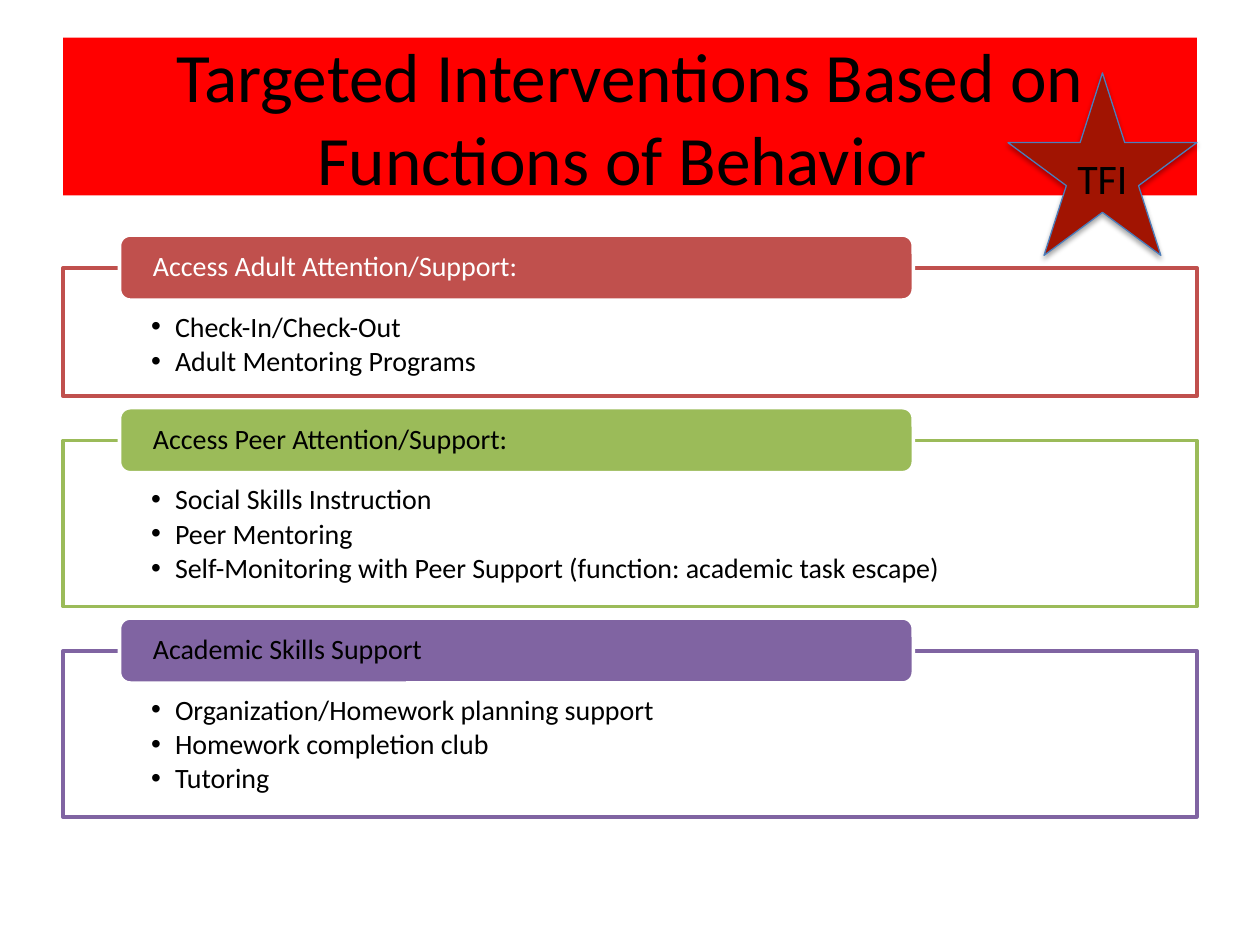
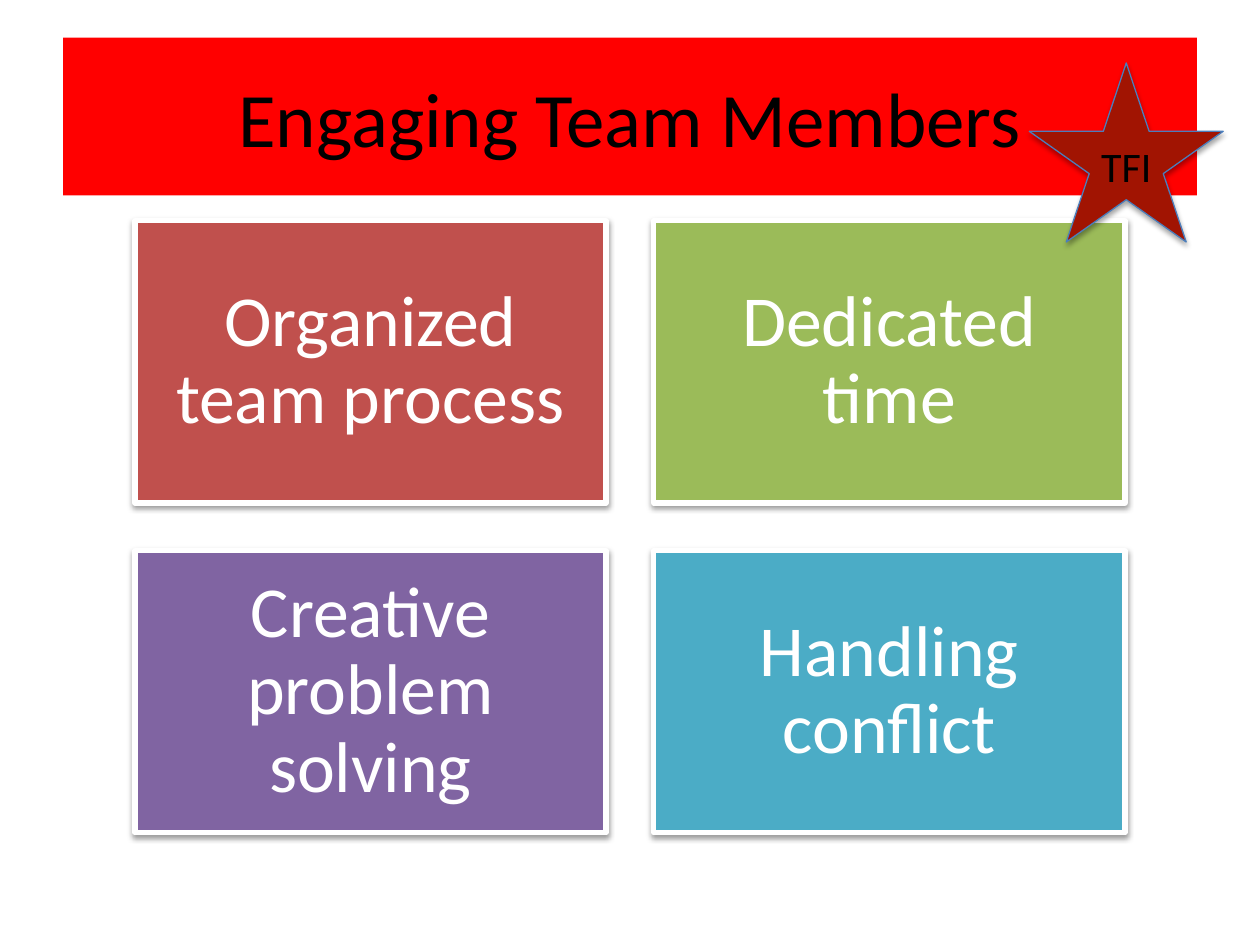
from lxml.etree import SubElement
from pptx import Presentation
from pptx.dml.color import RGBColor
from pptx.enum.shapes import MSO_SHAPE
from pptx.enum.text import MSO_ANCHOR, MSO_AUTO_SIZE, PP_ALIGN
from pptx.oxml.ns import qn
from pptx.util import Cm, Pt

FONT = "Calibri"
COLORS = {
    "band": "FF0000", "star": "A11402", "edge": "4B7EBC",
    "red": "C0504D", "green": "9BBB59", "purple": "8064A2", "teal": "4BACC6",
    "white": "FFFFFF", "black": "000000",
}
BAND = (1.27, 0.76, 22.86, 3.18)

PANELS = [
    ("Access Adult Attention/Support:", "red", "white",
     ["Check-In/Check-Out", "Adult Mentoring Programs"]),
    ("Access Peer Attention/Support:", "green", "black",
     ["Social Skills Instruction", "Peer Mentoring",
      "Self-Monitoring with Peer Support (function: academic task escape)"]),
    ("Academic Skills Support", "purple", "black",
     ["Organization/Homework planning support", "Homework completion club",
      "Tutoring"]),
]
CARDS = [
    ("Organized team process", "red"), ("Dedicated time", "green"),
    ("Creative problem solving", "purple"), ("Handling conflict", "teal"),
]


def rgb(name):
    return RGBColor.from_string(COLORS[name])


def draw(slide, kind, box, fill, line, width):
    shape = slide.shapes.add_shape(kind, *map(Cm, box))
    shape.fill.solid()
    shape.fill.fore_color.rgb = rgb(fill)
    shape.line.color.rgb = rgb(line)
    shape.line.width = Pt(width)
    shape.shadow.inherit = False
    return shape


def shade(shape, dist, alpha):
    """Add a soft shadow that falls straight down."""
    effects = shape._element.spPr.find(qn("a:effectLst"))
    outer = SubElement(effects, qn("a:outerShdw"), blurRad=str(Pt(3.1)),
                       dist=str(Pt(dist)), dir="5400000", rotWithShape="0")
    color = SubElement(outer, qn("a:srgbClr"), val=COLORS["black"])
    SubElement(color, qn("a:alpha"), val=str(alpha * 1000))


def write(shape, lines, size, color, align=PP_ALIGN.LEFT,
          anchor=MSO_ANCHOR.MIDDLE, pads=(0, 0), space=None, bullet=False):
    """Fill a shape with text; pads are the side and the top/bottom insets."""
    frame = shape.text_frame
    frame.text = "\n".join(lines)
    frame.word_wrap = True
    frame.auto_size = MSO_AUTO_SIZE.NONE
    frame.vertical_anchor = anchor
    frame.margin_left = frame.margin_right = Cm(pads[0])
    frame.margin_top = frame.margin_bottom = Cm(pads[1])
    for para in frame.paragraphs:
        para.alignment = align
        if space:
            para.line_spacing = space
        if bullet:
            para.space_after = Pt(size * 0.15)
            props = para._p.get_or_add_pPr()
            props.set("marL", str(Cm(0.48)))
            props.set("indent", str(-Cm(0.48)))
            SubElement(props, qn("a:buFont"), typeface="Arial")
            SubElement(props, qn("a:buChar"), char="•")
        for run in para.runs:
            run.font.name = FONT
            run.font.size = Pt(size)
            run.font.color.rgb = rgb(color)


def start(deck, text, size):
    """Add a slide with its red title band."""
    slide = deck.slides.add_slide(deck.slide_layouts[5])
    title = slide.shapes.title
    title.left, title.top, title.width, title.height = map(Cm, BAND)
    title.fill.solid()
    title.fill.fore_color.rgb = rgb("band")
    write(title, [text], size, "black", PP_ALIGN.CENTER, pads=(0.25, 0.13))
    return slide


def badge(slide, box):
    star = draw(slide, MSO_SHAPE.STAR_5_POINT, box, "star", "edge", 0.75)
    shade(star, 1.8, 35)
    write(star, ["TFI"], 24, "black", PP_ALIGN.CENTER)
    star.text_frame.word_wrap = False


def panel(slide, box, head, color, ink, items):
    left, top, width, height = box
    # Outlined list
    frame = draw(slide, MSO_SHAPE.RECTANGLE, box, "white", color, 2)
    write(frame, items, 16, "black", anchor=MSO_ANCHOR.TOP,
          pads=(1.78, 0.91), space=0.9, bullet=True)
    frame.text_frame.margin_bottom = Cm(0.3)
    # Label across the top edge
    label = draw(slide, MSO_SHAPE.ROUNDED_RECTANGLE,
                 (left + 1.14, top - 0.66, width * 0.7, 1.31),
                 color, "white", 2)
    write(label, [head], 16, ink, pads=(0.61, 0), space=0.9)


def stack(slide, left, top, width, gap):
    for head, color, ink, items in PANELS:
        height = 1.07 + 0.76 * len(items)
        panel(slide, (left, top, width, height), head, color, ink, items)
        top += height + gap


def grid(slide, left, top, width, height, gap):
    for i, (text, color) in enumerate(CARDS):
        row, col = divmod(i, 2)
        box = (left + col * (width + gap), top + row * (height + gap),
               width, height)
        card = draw(slide, MSO_SHAPE.RECTANGLE, box, color, "white", 3)
        shade(card, 1.6, 38)
        write(card, [text], 41, "white", PP_ALIGN.CENTER,
              pads=(0.43, 0.43), space=0.9)


def main():
    deck = Presentation()
    deck.slide_width, deck.slide_height = Cm(25.4), Cm(19.05)

    # Interventions by function
    slide = start(
        deck, "Targeted Interventions Based on Functions of Behavior ", 39.6)
    stack(slide, 1.27, 5.4, 22.86, 0.89)
    badge(slide, (20.32, 1.47, 3.81, 3.68))

    # Team members
    slide = start(deck, "Engaging Team Members", 44)
    grid(slide, 2.72, 4.45, 9.5, 5.69, 0.96)
    badge(slide, (20.75, 1.27, 3.91, 3.61))

    deck.save("out.pptx")


if __name__ == "__main__":
    main()
